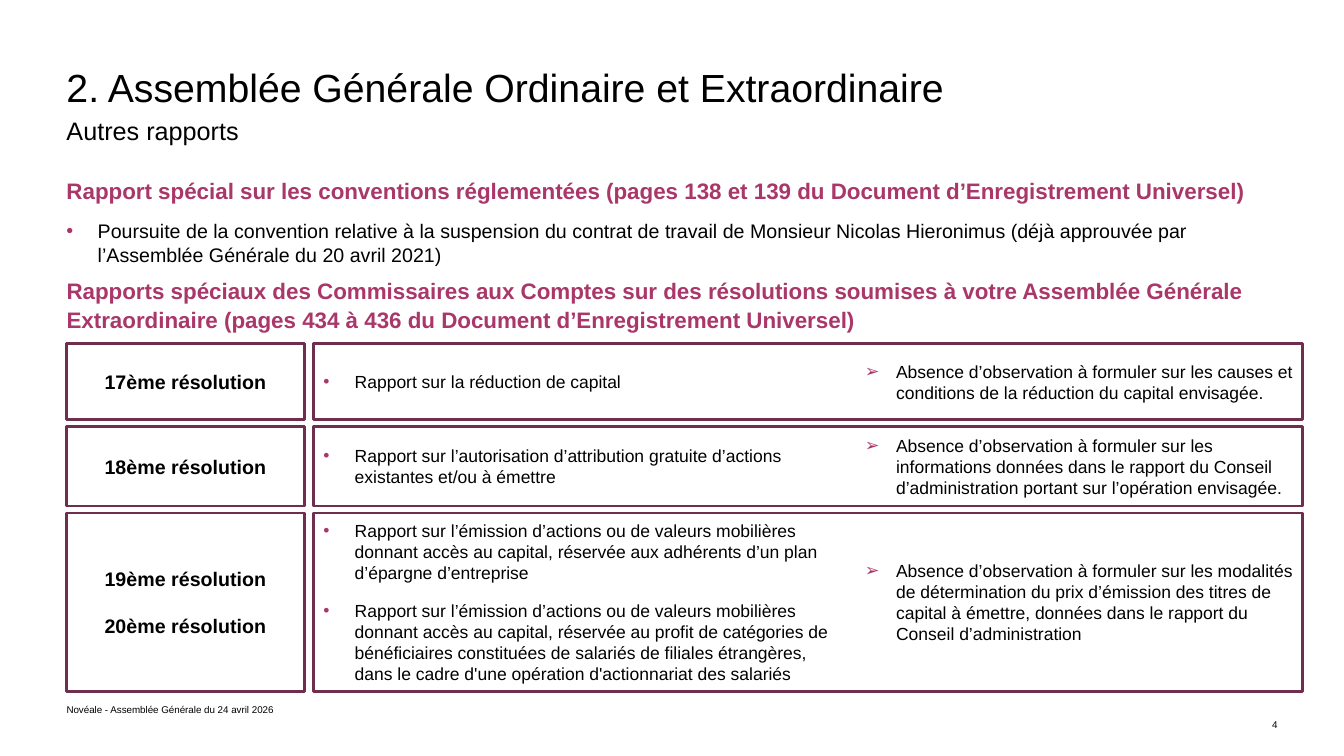
import dataclasses

import pptx
import pptx.dml.color
import pptx.enum.shapes
import pptx.enum.text
import pptx.oxml
import pptx.oxml.ns
import pptx.util

ALIGN = pptx.enum.text.PP_ALIGN
ANCHOR = pptx.enum.text.MSO_ANCHOR
SCALE = 9144
INDENT = 31


@dataclasses.dataclass(frozen=True)
class Theme:
    font: str = "Arial"
    ink: str = "000000"
    rose: str = "AA3769"
    plum: str = "702E4F"
    title: float = 28
    sub: float = 18
    head: float = 16
    body: float = 14
    cell: float = 12.5
    foot: float = 7
    edge: float = 2


THEME = Theme()


def px(size):
    return pptx.util.Emu(size * SCALE)


def rgb(code):
    return pptx.dml.color.RGBColor.from_string(code)


def add_mark(para, mark):
    props = para._p.get_or_add_pPr()
    props.set("marL", str(px(INDENT)))
    props.set("indent", str(-px(INDENT)))
    space = pptx.oxml.ns.nsdecls("a")
    for part in (
        f'<a:buClr {space}><a:srgbClr val="{THEME.rose}"/></a:buClr>',
        f'<a:buFont {space} typeface="{THEME.font}"/>',
        f'<a:buChar {space} char="{mark}"/>',
    ):
        props.append(pptx.oxml.parse_xml(part))


def write(frame, lines, size, color=THEME.ink, bold=False, align=ALIGN.LEFT,
          mark=None, gap=0, lead=None):
    for spot, words in enumerate(lines):
        para = frame.paragraphs[0] if spot == 0 else frame.add_paragraph()
        if mark:
            add_mark(para, mark)
        para.alignment = align
        if lead:
            para.line_spacing = lead
        if spot:
            para.space_before = pptx.util.Pt(gap)
        run = para.add_run()
        run.text = words
        run.font.name = THEME.font
        run.font.size = pptx.util.Pt(size)
        run.font.bold = bold
        run.font.color.rgb = rgb(color)


def add_text(slide, area, lines, size, anchor=ANCHOR.TOP, inset=(0, 0), **style):
    frame = slide.shapes.add_textbox(*map(px, area)).text_frame
    frame.word_wrap = True
    frame.vertical_anchor = anchor
    frame.margin_left = frame.margin_right = px(inset[0])
    frame.margin_top = frame.margin_bottom = px(inset[1])
    write(frame, lines, size, **style)
    return frame


def add_box(slide, area):
    kind = pptx.enum.shapes.MSO_SHAPE.RECTANGLE
    box = slide.shapes.add_shape(kind, *map(px, area))
    box.shadow.inherit = False
    box.fill.background()
    box.line.color.rgb = rgb(THEME.plum)
    box.line.width = pptx.util.Pt(THEME.edge)
    return box


def add_row(slide, top, high, names, topics, views):
    label = add_box(slide, (66, top, 236, high)).text_frame
    label.word_wrap = True
    label.vertical_anchor = ANCHOR.MIDDLE
    write(label, names, THEME.body, bold=True, align=ALIGN.CENTER, gap=17)
    add_box(slide, (311, top, 981, high))
    for left, wide, lines, mark in ((311, 528, topics, "•"), (848, 446, views, "➢")):
        add_text(slide, (left, top, wide, high), lines, THEME.cell, ANCHOR.MIDDLE,
                 (10, 5), mark=mark, gap=12)


def add_intro(slide):
    frame = add_text(
        slide, (66, 163, 1200, 101),
        ["Rapport spécial sur les conventions réglementées (pages 138 et 139 du Document d’Enregistrement Universel)"],
        THEME.head, ANCHOR.BOTTOM, color=THEME.rose, bold=True)
    para = frame.add_paragraph()
    add_mark(para, "•")
    para.space_before = pptx.util.Pt(11)
    run = para.add_run()
    run.text = ("Poursuite de la convention relative à la suspension du contrat de travail de Monsieur "
                "Nicolas Hieronimus (déjà approuvée par l’Assemblée Générale du 20 avril 2021)")
    run.font.name = THEME.font
    run.font.size = pptx.util.Pt(THEME.body)
    run.font.color.rgb = rgb(THEME.ink)


ROWS = (
    (75, ["17ème résolution"],
     ["Rapport sur la réduction de capital"],
     ["Absence d’observation à formuler sur les causes et conditions de la réduction du capital envisagée."]),
    (79, ["18ème résolution"],
     ["Rapport sur l’autorisation d’attribution gratuite d’actions existantes et/ou à émettre"],
     ["Absence d’observation à formuler sur les informations données dans le rapport du Conseil "
      "d’administration portant sur l’opération envisagée."]),
    (177, ["19ème résolution", "20ème résolution"],
     ["Rapport sur l’émission d’actions ou de valeurs mobilières donnant accès au capital, réservée "
      "aux adhérents d’un plan d’épargne d’entreprise",
      "Rapport sur l’émission d’actions ou de valeurs mobilières donnant accès au capital, réservée "
      "au profit de catégories de bénéficiaires constituées de salariés de filiales étrangères, "
      "dans le cadre d'une opération d'actionnariat des salariés"],
     ["Absence d’observation à formuler sur les modalités de détermination du prix d’émission des "
      "titres de capital à émettre, données dans le rapport du Conseil d’administration"]),
)


def main():
    deck = pptx.Presentation()
    deck.slide_width, deck.slide_height = px(1333), px(750)
    slide = deck.slides.add_slide(deck.slide_layouts[6])
    add_text(slide, (66, 70, 900, 50), ["2. Assemblée Générale Ordinaire et Extraordinaire"],
             THEME.title, lead=0.85)
    add_text(slide, (66, 119, 900, 32), ["Autres rapports"], THEME.sub, lead=0.85)
    add_intro(slide)
    add_text(
        slide, (66, 274, 1238, 55),
        ["Rapports spéciaux des Commissaires aux Comptes sur des résolutions soumises à votre Assemblée "
         "Générale Extraordinaire (pages 434 à 436 du Document d’Enregistrement Universel)"],
        THEME.head, color=THEME.rose, bold=True, lead=1.05)
    top = 341
    for high, names, topics, views in ROWS:
        add_row(slide, top, high, names, topics, views)
        top += high + 7
    add_text(slide, (66, 695, 435, 15), ["Novéale - Assemblée Générale du 24 avril 2026"],
             THEME.foot, ANCHOR.BOTTOM)
    add_text(slide, (1127, 710, 140, 15), ["4"], THEME.foot, ANCHOR.BOTTOM, align=ALIGN.RIGHT)
    deck.save("out.pptx")


if __name__ == "__main__":
    main()
